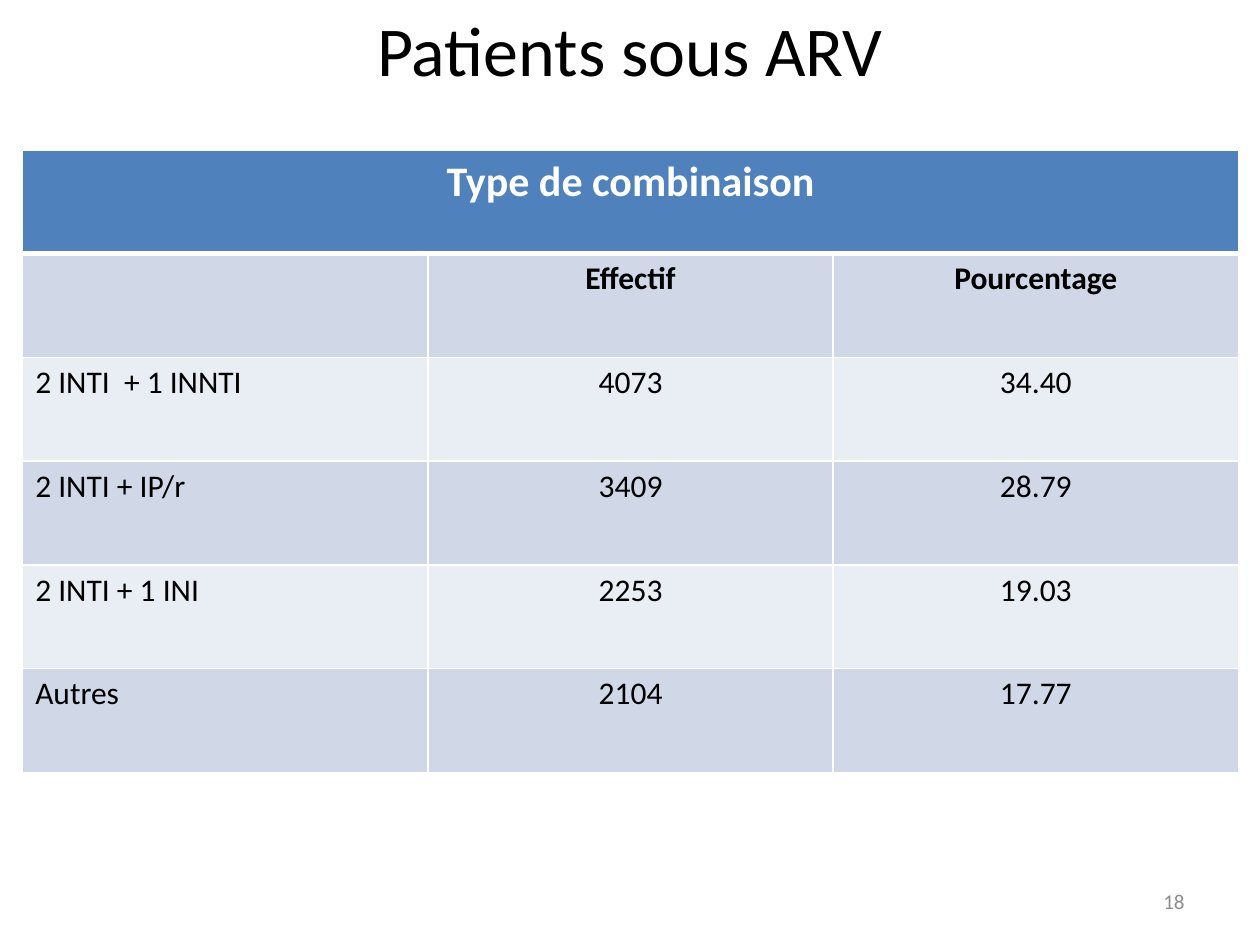
"""Build the slide on combinations given to patients under ARV."""
from dataclasses import dataclass

from lxml import etree
from pptx import Presentation
from pptx.dml.color import RGBColor
from pptx.enum.text import MSO_ANCHOR, PP_ALIGN
from pptx.oxml.ns import qn
from pptx.util import Inches, Pt

LEFT, CENTER, RIGHT = PP_ALIGN.LEFT, PP_ALIGN.CENTER, PP_ALIGN.RIGHT
TOP, MIDDLE = MSO_ANCHOR.TOP, MSO_ANCHOR.MIDDLE
BLANK_LAYOUT = 6

HEADING = "Type de combinaison"
ROWS = [
    ("", "Effectif", "Pourcentage"),
    ("2 INTI  + 1 INNTI", "4073", "34.40"),
    ("2 INTI + IP/r", "3409", "28.79"),
    ("2 INTI + 1 INI", "2253", "19.03"),
    ("Autres", "2104", "17.77"),
]


@dataclass(frozen=True)
class Theme:
    font: str = "Calibri"
    black: str = "000000"
    white: str = "FFFFFF"
    grey: str = "8C8C8C"
    header: str = "4F81BD"
    bands: tuple = ("D0D8E8", "E9EDF4")
    title_size: int = 40
    heading_size: int = 24
    body_size: int = 18
    number_size: int = 12
    thin: int = 1
    thick: int = 3


class SlideBuilder:
    def __init__(self, page, theme):
        self.page = page
        self.theme = theme

    def add_span(self, frame, text, size, color, align, bold=False):
        para = frame.paragraphs[0]
        para.alignment = align
        if not text:
            return
        span = para.add_run()
        span.text = text
        span.font.name = self.theme.font
        span.font.size = Pt(size)
        span.font.bold = bold
        span.font.color.rgb = RGBColor.from_string(color)

    def text(self, place, text, size, color, align, anchor=TOP):
        box = self.page.shapes.add_textbox(*map(Inches, place))
        frame = box.text_frame
        frame.word_wrap = True
        frame.vertical_anchor = anchor
        self.add_span(frame, text, size, color, align)

    def cell(self, cell, fill, top, bottom):
        cell.fill.solid()
        cell.fill.fore_color.rgb = RGBColor.from_string(fill)
        thin = self.theme.thin
        edges = {"a:lnL": thin, "a:lnR": thin, "a:lnT": top, "a:lnB": bottom}
        properties = cell._tc.get_or_add_tcPr()
        for index, (tag, width) in enumerate(edges.items()):
            line = etree.Element(qn(tag), w=str(Pt(width)))
            paint = etree.SubElement(line, qn("a:solidFill"))
            etree.SubElement(paint, qn("a:srgbClr"), val=self.theme.white)
            properties.insert(index, line)

    def table(self, place, heading, rows):
        theme = self.theme
        columns = len(rows[0])
        grid = self.page.shapes.add_table(
            len(rows) + 1, columns, *map(Inches, place)).table
        for column in range(columns):
            self.cell(grid.cell(0, column), theme.header, theme.thin, theme.thick)
        grid.cell(0, 0).merge(grid.cell(0, columns - 1))
        self.add_span(grid.cell(0, 0).text_frame, heading, theme.heading_size,
                      theme.white, CENTER, bold=True)
        for row, values in enumerate(rows):
            for column, value in enumerate(values):
                cell = grid.cell(row + 1, column)
                top = theme.thin if row else theme.thick
                self.cell(cell, theme.bands[row % 2], top, theme.thin)
                self.add_span(cell.text_frame, value, theme.body_size, theme.black,
                              CENTER if column else LEFT, bold=row == 0)


def main():
    deck = Presentation()
    deck.slide_width, deck.slide_height = Inches(10), Inches(7.5)
    page = deck.slides.add_slide(deck.slide_layouts[BLANK_LAYOUT])
    theme = Theme()
    builder = SlideBuilder(page, theme)
    builder.text((7.17, 6.95, 2.33, 0.4), "18", theme.number_size,
                 theme.grey, RIGHT, MIDDLE)
    builder.table((0.18, 1.19, 9.65, 4.94), HEADING, ROWS)
    builder.text((0, 0, 10, 0.77), "Patients sous ARV", theme.title_size,
                 theme.black, CENTER)
    deck.save("out.pptx")


if __name__ == "__main__":
    main()
